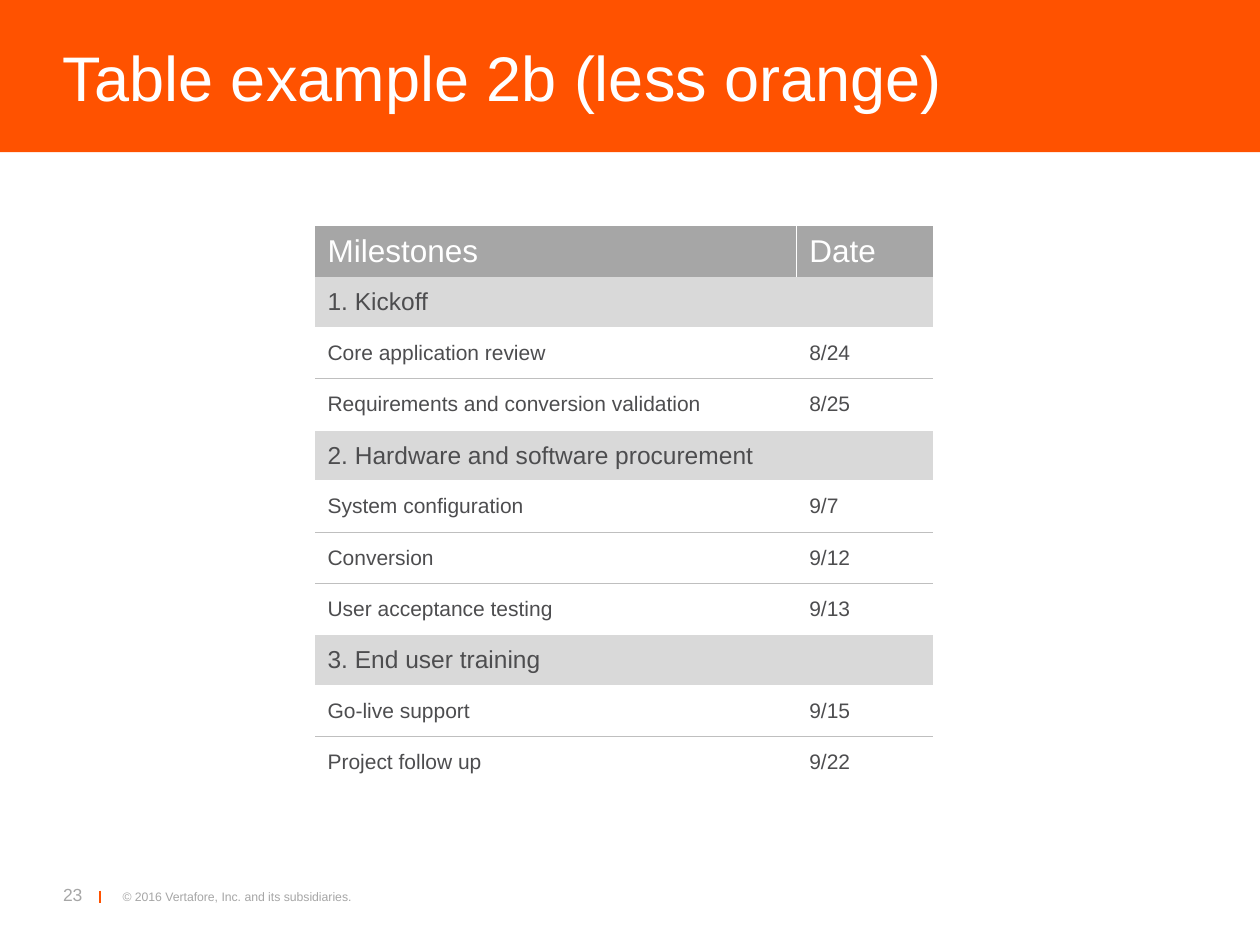
"""Build a slide with a milestone table under an orange title band."""
import pptx
import pptx.dml.color
import pptx.enum.shapes
import pptx.enum.text
import pptx.oxml
import pptx.oxml.ns
import pptx.util

Pt = pptx.util.Pt
ALIGN = pptx.enum.text.PP_ALIGN
ANCHOR = pptx.enum.text.MSO_ANCHOR

COLORS = {"orange": "FF5200", "white": "FFFFFF", "gray": "A6A6A6",
          "band": "D9D9D9", "rule": "BFBFBF", "text": "4D4D4F"}
FONT = "Arial"
TITLE = "Table example 2b (less orange)"
PAGE_NUMBER = "23"
COPYRIGHT = "© 2016 Vertafore, Inc. and its subsidiaries."

HEADER = ("Milestones", "Date")
SECTIONS = [
    ("1. Kickoff", [("Core application review", "8/24"),
                    ("Requirements and conversion validation", "8/25")]),
    ("2. Hardware and software procurement", [("System configuration", "9/7"),
                                              ("Conversion", "9/12"),
                                              ("User acceptance testing", "9/13")]),
    ("3. End user training", [("Go-live support", "9/15"),
                              ("Project follow up", "9/22")]),
]
ROW_STYLES = {"header": ("gray", "white", 18),
              "section": ("band", "text", 14),
              "task": ("white", "text", 12)}
TABLE_LEFT, TABLE_TOP = 180, 128.9
COLUMN_WIDTHS = (275.3, 78)
ROW_HEIGHT = 29.2


def rgb(name):
    return pptx.dml.color.RGBColor.from_string(COLORS[name])


def style_font(para, size, color):
    para.font.name = FONT
    para.font.size = Pt(size)
    para.font.color.rgb = rgb(color)


def add_text(page, text, place, size, color, align=ALIGN.LEFT, anchor=ANCHOR.TOP, wrap=True):
    box = page.shapes.add_textbox(*map(Pt, place))
    frame = box.text_frame
    frame.margin_left = frame.margin_right = frame.margin_top = frame.margin_bottom = 0
    frame.word_wrap = wrap
    frame.vertical_anchor = anchor
    para = frame.paragraphs[0]
    para.text = text
    para.alignment = align
    style_font(para, size, color)


def set_borders(cell, borders):
    properties = cell._tc.get_or_add_tcPr()
    for position, side in enumerate("LRTB"):
        color, width = borders.get(side, (None, 0))
        paint = (f'<a:solidFill><a:srgbClr val="{COLORS[color]}"/></a:solidFill>'
                 if color else "<a:noFill/>")
        properties.insert(position, pptx.oxml.parse_xml(
            f'<a:ln{side} {pptx.oxml.ns.nsdecls("a")} w="{int(Pt(width))}">{paint}</a:ln{side}>'))


def edge_between(upper, lower):
    if upper == lower == "task":
        return {"edge": ("rule", 0.75)}
    if "task" in (upper, lower) and None not in (upper, lower):
        return {"edge": ("white", 1)}
    return {}


def cell_borders(kinds, row, column):
    above = kinds[row - 1] if row else None
    below = kinds[row + 1] if row + 1 < len(kinds) else None
    borders = {}
    for side, edge in (("T", edge_between(above, kinds[row])),
                       ("B", edge_between(kinds[row], below))):
        if edge:
            borders[side] = edge["edge"]
    if kinds[row] == "header":
        borders["LR"[column == 0]] = ("white", 0.75)
    return borders


def add_milestones(page):
    rows = [("header", HEADER)]
    for heading, tasks in SECTIONS:
        rows.append(("section", (heading, "")))
        rows.extend(("task", task) for task in tasks)
    kinds = [kind for kind, _ in rows]
    table = page.shapes.add_table(
        len(rows), len(COLUMN_WIDTHS), Pt(TABLE_LEFT), Pt(TABLE_TOP),
        Pt(sum(COLUMN_WIDTHS)), Pt(ROW_HEIGHT * len(rows))).table
    table.horz_banding = False
    table.first_row = False
    for column, width in zip(table.columns, COLUMN_WIDTHS):
        column.width = Pt(width)
    for row, (kind, texts) in enumerate(rows):
        table.rows[row].height = Pt(ROW_HEIGHT)
        fill, color, size = ROW_STYLES[kind]
        for column, text in enumerate(texts):
            cell = table.cell(row, column)
            cell.fill.solid()
            cell.fill.fore_color.rgb = rgb(fill)
            cell.vertical_anchor = ANCHOR.MIDDLE
            para = cell.text_frame.paragraphs[0]
            para.text = text
            style_font(para, size, color)
            set_borders(cell, cell_borders(kinds, row, column))


def main():
    deck = pptx.Presentation()
    deck.slide_width, deck.slide_height = Pt(720), Pt(540)
    page = deck.slides.add_slide(deck.slide_layouts[6])

    band = page.shapes.add_shape(
        pptx.enum.shapes.MSO_SHAPE.RECTANGLE, 0, 0, Pt(720), Pt(87))
    band.shadow.inherit = False
    band.fill.solid()
    band.fill.fore_color.rgb = rgb("orange")
    band.line.fill.background()

    add_text(page, COPYRIGHT, (67.7, 508.3, 133.2, 8.6), 7, "gray", ALIGN.RIGHT, wrap=False)
    divider = page.shapes.add_connector(
        pptx.enum.shapes.MSO_CONNECTOR.STRAIGHT, Pt(57), Pt(509), Pt(57), Pt(516.2))
    divider.line.color.rgb = rgb("orange")
    divider.line.width = Pt(1)
    divider._element.spPr.append(pptx.oxml.parse_xml(
        f'<a:effectLst {pptx.oxml.ns.nsdecls("a")}/>'))
    add_text(page, PAGE_NUMBER, (36, 505.4, 44.6, 12.2), 10, "gray")
    add_text(page, TITLE, (36, 9.4, 648, 68.4), 36, "white", anchor=ANCHOR.MIDDLE)
    add_milestones(page)
    deck.save("out.pptx")


if __name__ == "__main__":
    main()
